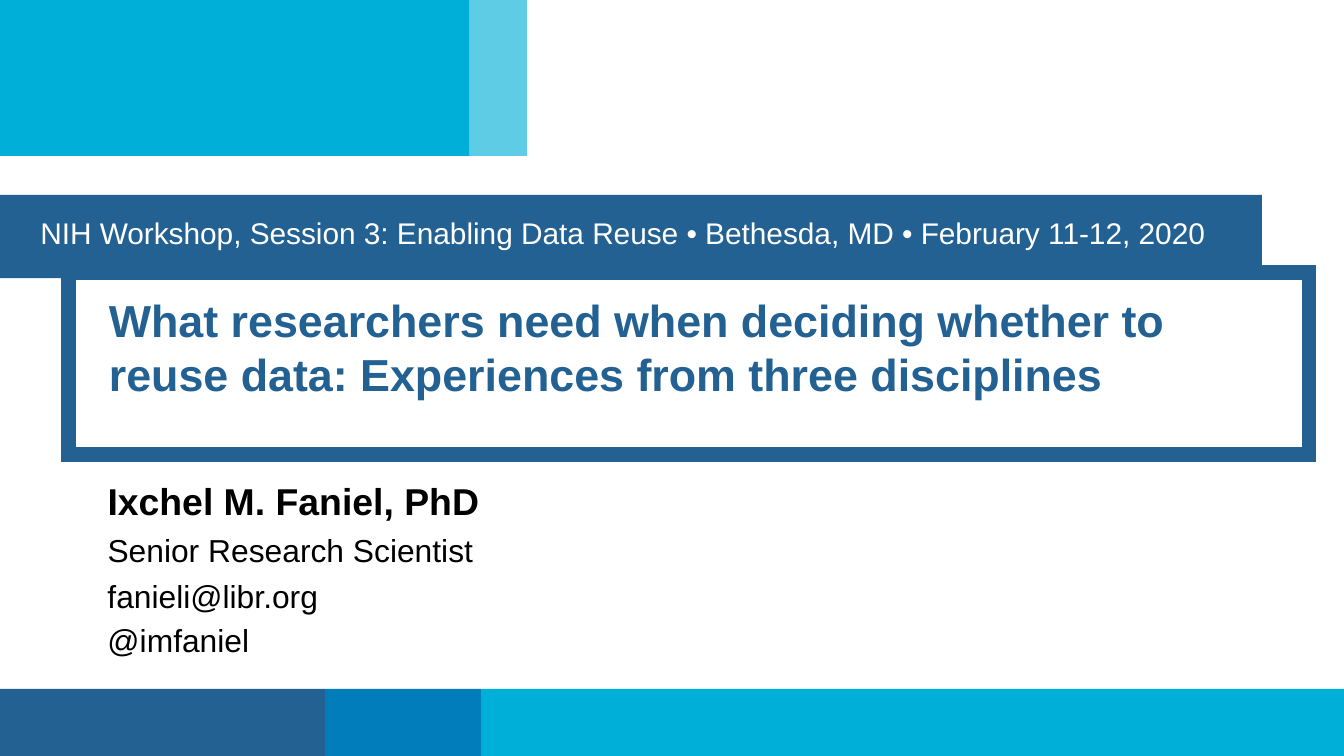
import pptx
import pptx.dml.color
import pptx.enum.shapes
import pptx.enum.text
import pptx.oxml.ns
import pptx.util
from dataclasses import dataclass
from lxml import etree

CELL = 0.1
COLUMNS = 100
ROWS = COLUMNS * 9 / 16
FOOTER_ROWS = 5


@dataclass(frozen=True)
class Theme:
    font: str = "Arial"
    navy: str = "236192"
    blue: str = "007DBA"
    cyan: str = "00AFD7"
    white: str = "FFFFFF"
    black: str = "000000"
    banner_size: int = 16
    title_size: int = 24
    name_size: int = 20
    detail_size: int = 17
    border: int = 8


THEME = Theme()


def cells(count):
    return pptx.util.Inches(count * CELL)


def color(value):
    return pptx.dml.color.RGBColor.from_string(value)


def set_values(target, values):
    for name, value in values.items():
        setattr(target, name, value)


def place(shape, left, top, width, height):
    set_values(shape, dict(left=cells(left), top=cells(top),
                           width=cells(width), height=cells(height)))


def fill_shape(shape, value):
    shape.fill.solid()
    shape.fill.fore_color.rgb = color(value)


def add_block(slide, box, value, opacity=100):
    shape = slide.shapes.add_shape(
        pptx.enum.shapes.MSO_SHAPE.RECTANGLE, *map(cells, box))
    shape.shadow.inherit = False
    fill_shape(shape, value)
    shape.line.fill.background()
    if opacity < 100:
        tone = shape.fill._xPr.find(".//" + pptx.oxml.ns.qn("a:srgbClr"))
        etree.SubElement(tone, pptx.oxml.ns.qn("a:alpha"), val=str(opacity * 1000))


def add_border(shape, value, width):
    shape.line.color.rgb = color(value)
    shape.line.width = pptx.util.Pt(width)
    outline = shape.line._get_or_add_ln()
    etree.SubElement(outline, pptx.oxml.ns.qn("a:miter"), lim="800000")


def remove_bullet(paragraph):
    properties = paragraph._p.get_or_add_pPr()
    for name in ("marL", "indent"):
        properties.set(name, "0")
    etree.SubElement(properties, pptx.oxml.ns.qn("a:buNone"))


def write(shape, box, lines, insets, size, value, bold=False, wrap=False,
          grow=False, before=0):
    place(shape, *box)
    frame = shape.text_frame
    fit = pptx.enum.text.MSO_AUTO_SIZE
    sides = ("margin_left", "margin_top", "margin_right", "margin_bottom")
    set_values(frame, dict(zip(sides, map(cells, insets))))
    set_values(frame, dict(
        text="\n".join(lines), word_wrap=wrap,
        auto_size=fit.SHAPE_TO_FIT_TEXT if grow else fit.NONE,
        vertical_anchor=pptx.enum.text.MSO_ANCHOR.TOP))
    for paragraph in frame.paragraphs:
        set_values(paragraph, dict(
            alignment=pptx.enum.text.PP_ALIGN.LEFT,
            space_before=pptx.util.Pt(before * size)))
        remove_bullet(paragraph)
        for run in paragraph.runs:
            set_values(run.font, dict(
                name=THEME.font, size=pptx.util.Pt(size), bold=bold))
            run.font.color.rgb = color(value)


def add_decoration(slide):
    left = 0
    footer = ((24.2, THEME.navy), (11.6, THEME.blue), (64.2, THEME.cyan))
    for width, value in footer:
        add_block(slide, (left, ROWS - FOOTER_ROWS, width, FOOTER_ROWS), value)
        left += width
    add_block(slide, (0, 0, 34.9, 11.6), THEME.cyan)
    add_block(slide, (34.3, 0, 4.9, 11.6), THEME.cyan, opacity=63)


def add_heading(title, banner):
    fill_shape(banner, THEME.navy)
    write(banner, (0, 14.5, 93.9, 6.2),
          ["NIH Workshop, Session 3: Enabling Data Reuse • Bethesda, MD • February 11-12, 2020"],
          (3, 1.5, 3, 2), THEME.banner_size, THEME.white)
    add_border(title, THEME.navy, THEME.border)
    write(title, (5.1, 20.3, 92.3, 13.5),
          ["What researchers need when deciding whether to reuse data: "
           "Experiences from three disciplines"],
          (3, 1.5, 3, 3), THEME.title_size, THEME.navy, bold=True, wrap=True)


def add_speaker(name, role, contact):
    write(name, (8, 35.1, 28.9, 4.4), ["Ixchel M. Faniel, PhD"],
          (0, 0.5, 1, 0.5), THEME.name_size, THEME.black, bold=True,
          grow=True, before=0.2)
    details = (
        (role, (8, 39.5, 28.5, 3.4), ["Senior Research Scientist"]),
        (contact, (8, 42.9, 18.7, 6.8), ["fanieli@libr.org", "@imfaniel"]),
    )
    for shape, box, lines in details:
        write(shape, box, lines, (0, 0, 1, 0.5), THEME.detail_size,
              THEME.black, grow=True, before=0.2)


def main():
    presentation = pptx.Presentation()
    set_values(presentation, dict(slide_width=cells(COLUMNS),
                                  slide_height=cells(ROWS)))
    slide = presentation.slides.add_slide(
        presentation.slide_layouts.get_by_name("Comparison"))
    title, banner, role, name, spare = slide.placeholders
    spare.element.getparent().remove(spare.element)
    add_decoration(slide)
    add_heading(title, banner)
    contact = slide.shapes.add_textbox(0, 0, cells(1), cells(1))
    add_speaker(name, role, contact)
    presentation.save("out.pptx")


if __name__ == "__main__":
    main()
